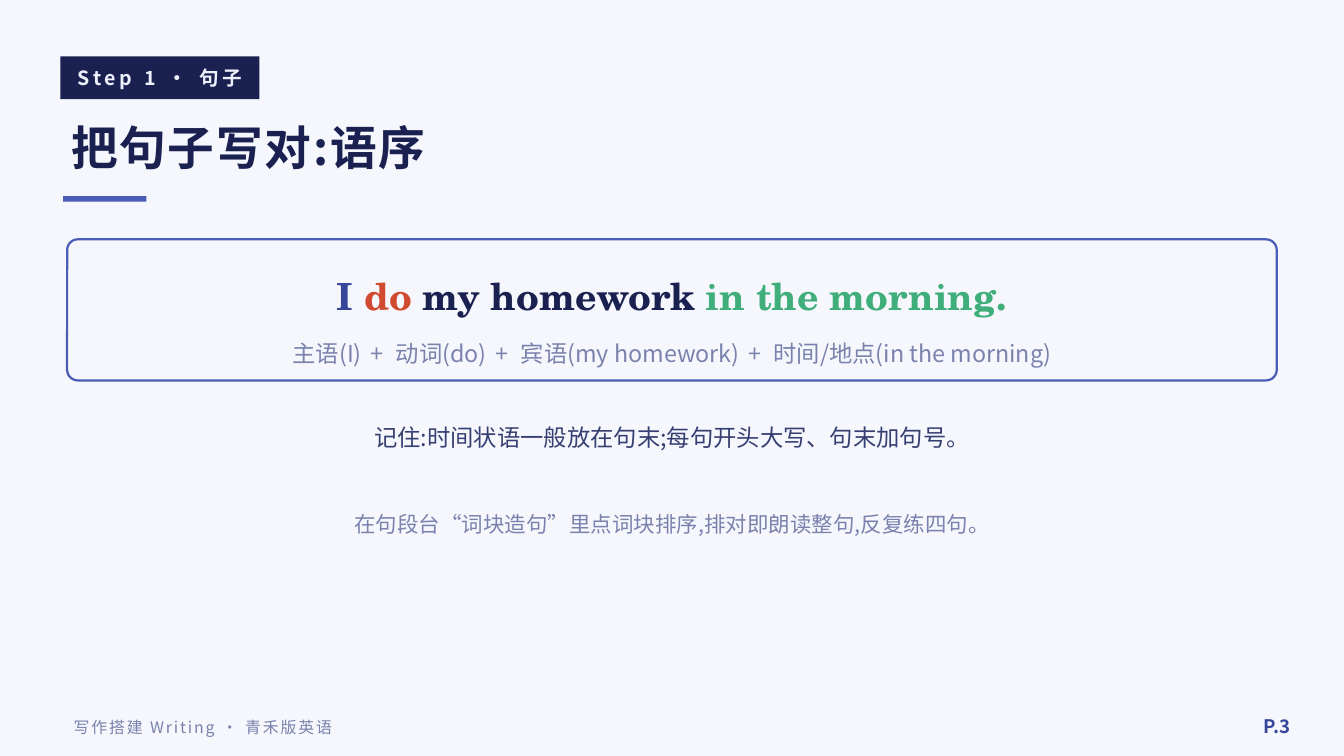
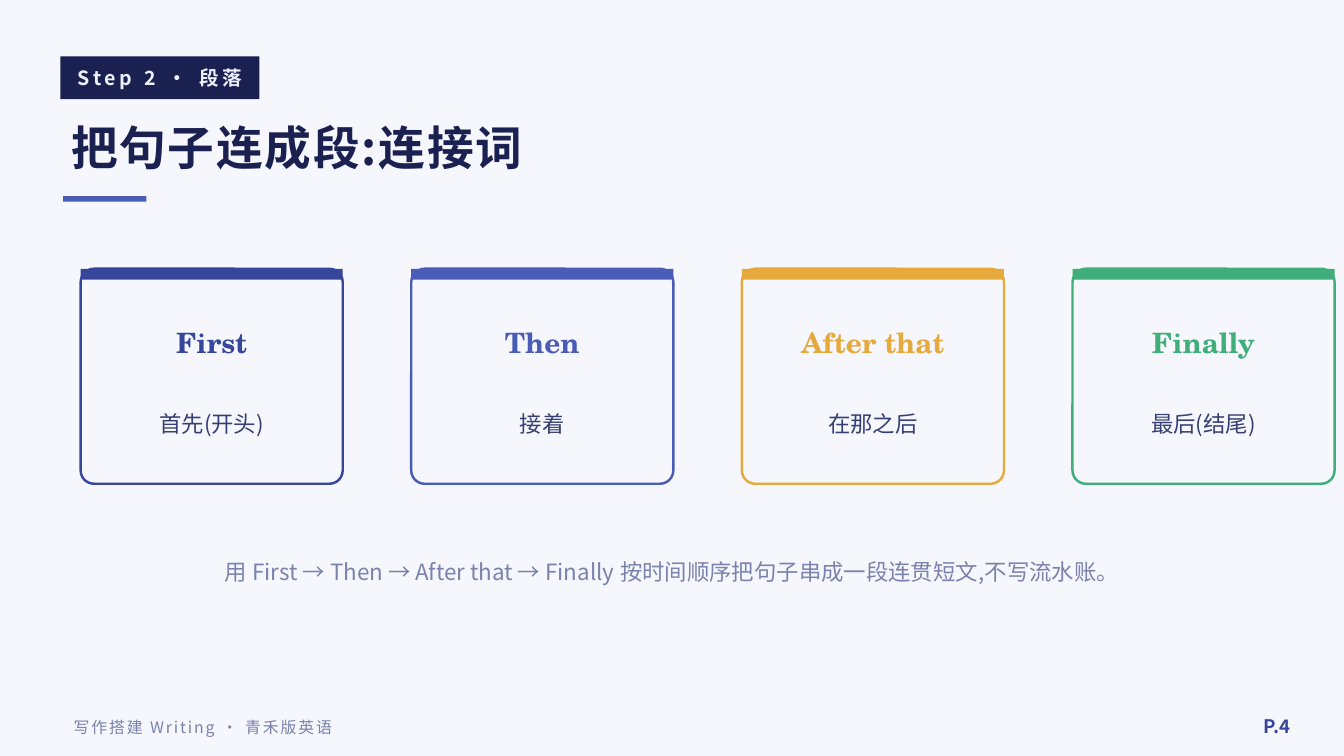
"""Build two lesson slides on writing English sentences and paragraphs."""
import pptx
import pptx.dml.color
import pptx.enum.shapes
import pptx.enum.text
import pptx.oxml.ns
import pptx.util
from lxml import etree

Pt = pptx.util.Pt
hex_color = pptx.dml.color.RGBColor.from_string
ALIGN = pptx.enum.text.PP_ALIGN
SHAPE = pptx.enum.shapes.MSO_SHAPE

PAPER, NAVY, INDIGO, BLUE = "F6F7FC", "1A2150", "36469A", "4A5CB5"
RED, GREEN, AMBER = "CF4A2E", "3FAE7A", "E6A93C"
INK, MUTED, TAG_INK = "363F72", "7A82AD", "EEF0FB"
SANS, SERIF = "Noto Sans CJK SC", "TeX Gyre Schola"


def add_text(slide, text, left, top, width, height, size=12, color=MUTED,
             font=SANS, bold=False, spacing=0, align=ALIGN.CENTER):
    """Add a text box; text is a string or a list of (text, color, spacing) runs."""
    frame = slide.shapes.add_textbox(Pt(left), Pt(top), Pt(width), Pt(height)).text_frame
    frame.word_wrap = True
    frame.vertical_anchor = pptx.enum.text.MSO_ANCHOR.MIDDLE
    paragraph = frame.paragraphs[0]
    paragraph.alignment = align
    pieces = [(text, color, spacing)] if isinstance(text, str) else text
    for piece, piece_color, piece_spacing in pieces:
        run = paragraph.add_run()
        run.text = piece
        run.font.size = Pt(size)
        run.font.bold = bold
        run.font.color.rgb = hex_color(piece_color)
        run.font.name = font
        properties = run.font._element
        etree.SubElement(properties, pptx.oxml.ns.qn("a:ea")).set("typeface", font)
        if piece_spacing:
            properties.set("spc", str(round(piece_spacing * 100)))


def add_block(slide, left, top, width, height, fill, line=None, line_width=1, corner=None):
    """Add a filled rectangle, rounded when corner is given."""
    kind = SHAPE.RECTANGLE if corner is None else SHAPE.ROUNDED_RECTANGLE
    block = slide.shapes.add_shape(kind, Pt(left), Pt(top), Pt(width), Pt(height))
    block.shadow.inherit = False
    block.fill.solid()
    block.fill.fore_color.rgb = hex_color(fill)
    if corner is not None:
        block.adjustments[0] = corner
    if line:
        block.line.color.rgb = hex_color(line)
        block.line.width = Pt(line_width)
    else:
        block.line.fill.background()


deck = pptx.Presentation()
deck.slide_width, deck.slide_height = Pt(720), Pt(405)

lessons = []
for step, title, page in [
    ("Step 1 · 句子", "把句子写对:语序", "P.3"),
    ("Step 2 · 段落", "把句子连成段:连接词", "P.4"),
]:
    lesson = deck.slides.add_slide(deck.slide_layouts[6])
    lesson.background.fill.solid()
    lesson.background.fill.fore_color.rgb = hex_color(PAPER)
    add_block(lesson, 32.4, 30.2, 106.6, 23, NAVY)
    add_text(lesson, step, 32.4, 29.5, 106.6, 24.5, size=10.5, color=TAG_INK,
             bold=True, spacing=2)
    add_text(lesson, title, 31, 56.2, 648, 44.6, size=25, color=NAVY, bold=True,
             spacing=1, align=ALIGN.LEFT)
    add_block(lesson, 33.8, 105.1, 44.6, 3, BLUE)
    add_text(lesson, "写作搭建 Writing · 青禾版英语", 32.4, 378.7, 432, 21.6, size=8.5,
             spacing=1, align=ALIGN.LEFT)
    add_text(lesson, page, 655.2, 377.3, 43.2, 23, size=10, color=INDIGO, bold=True,
             align=ALIGN.RIGHT)
    lessons.append(lesson)
word_order, connectives = lessons

add_block(word_order, 36, 128.2, 648, 75.6, PAPER, line=BLUE, line_width=1.2, corner=0.076)
example = [("I ", INDIGO, 0), ("do ", RED, 0), ("my homework ", NAVY, 0),
           ("in the morning.", GREEN, 0)]
add_text(word_order, example, 36, 140.4, 648, 36, size=20, font=SERIF, bold=True)
pattern = []
for role in ["主语(I)", "动词(do)", "宾语(my homework)", "时间/地点(in the morning)"]:
    if pattern:
        pattern.append((" + ", MUTED, 1.9))
    pattern.append((role, MUTED, 0))
add_text(word_order, pattern, 36, 176.4, 648, 25.2, size=12.5)
add_text(word_order, "记住:时间状语一般放在句末;每句开头大写、句末加句号。",
         36, 219.6, 648, 28.8, size=12.5, color=INK)
add_text(word_order, "在句段台“词块造句”里点词块排序,排对即朗读整句,反复练四句。",
         36, 266.4, 648, 28.8, size=11.5)

card_width, card_pitch = 140.4, 177.12
for index, (connective, meaning, accent) in enumerate([
    ("First", "首先(开头)", INDIGO),
    ("Then", "接着", BLUE),
    ("After that", "在那之后", AMBER),
    ("Finally", "最后(结尾)", GREEN),
]):
    left = 43.2 + index * card_pitch
    add_block(connectives, left, 144, card_width, 115.2, PAPER, line=accent,
              line_width=1.3, corner=0.062)
    add_block(connectives, left, 144, card_width, 5.8, accent)
    add_text(connectives, connective, left, 165.6, card_width, 36, size=15,
             color=accent, font=SERIF, bold=True)
    add_text(connectives, meaning, left + 8.6, 205.2, card_width - 17.2, 43.2, color=INK)
add_text(connectives,
         "用 First → Then → After that → Finally 按时间顺序把句子串成一段连贯短文,不写流水账。",
         36, 288, 648, 36)

deck.save("out.pptx")
